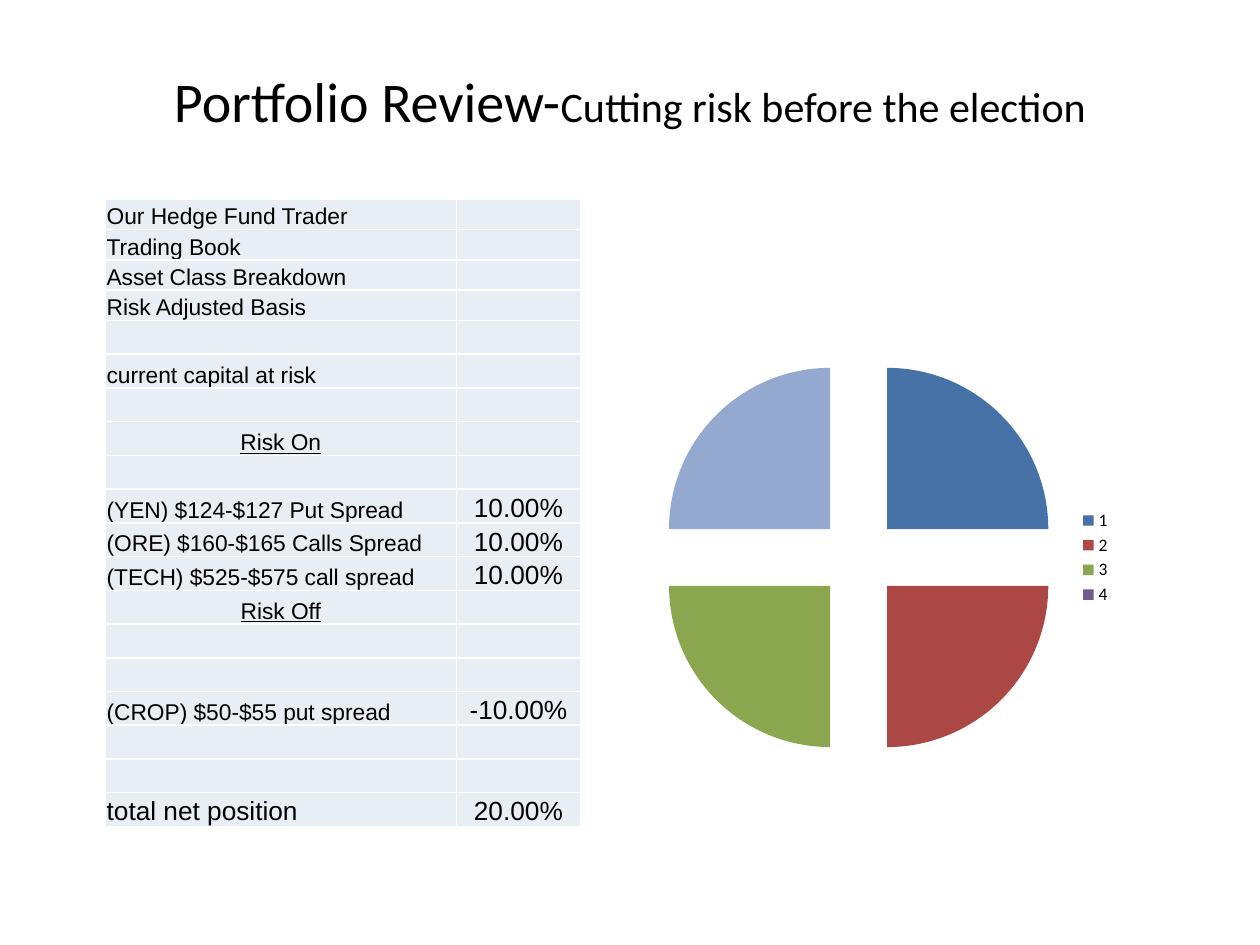
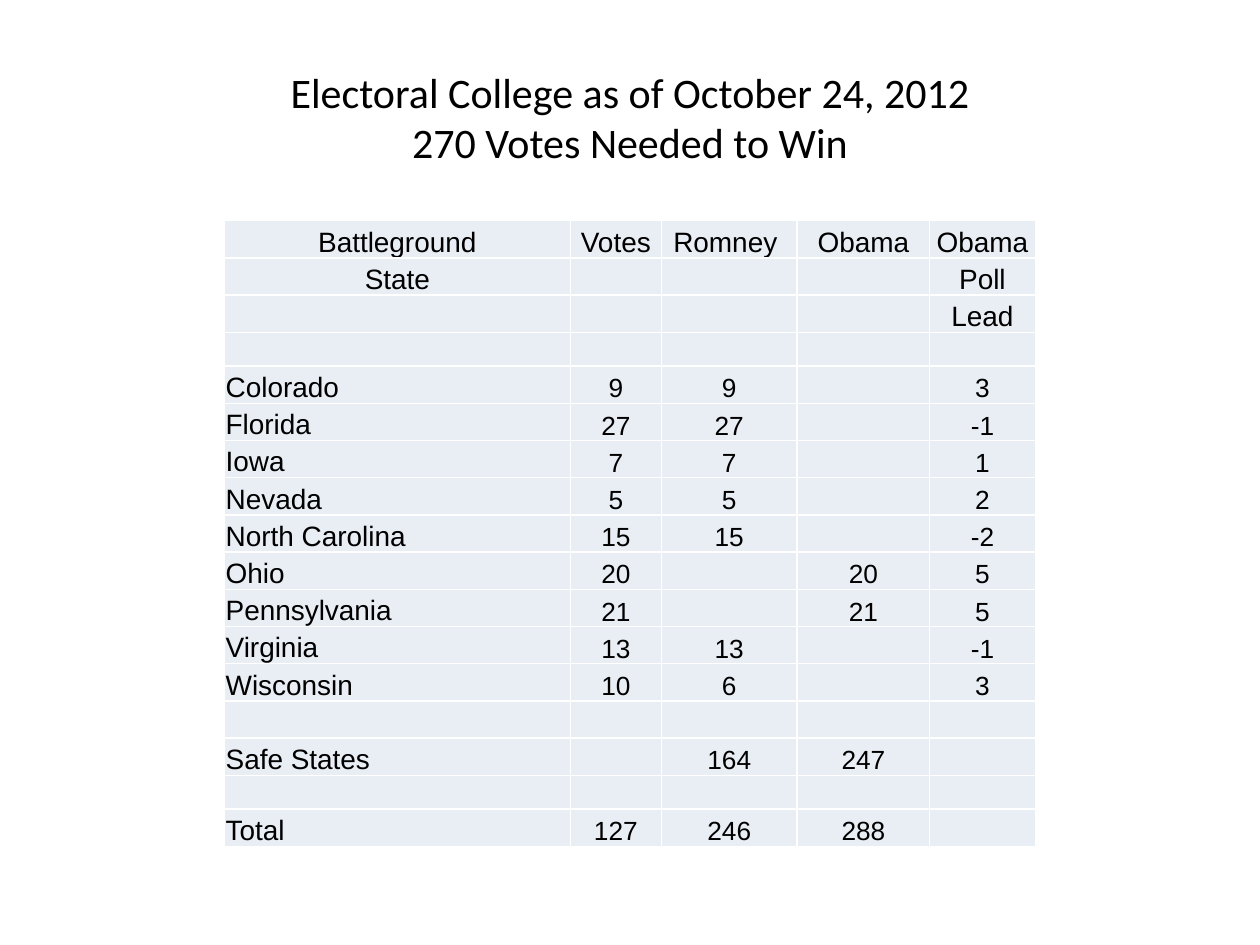
import pptx
import pptx.chart.data
import pptx.dml.color
import pptx.enum.chart
import pptx.enum.text
import pptx.oxml
import pptx.oxml.ns
import pptx.util
from lxml import etree

Cm, Pt = pptx.util.Cm, pptx.util.Pt
RGBColor = pptx.dml.color.RGBColor
PP_ALIGN, MSO_ANCHOR = pptx.enum.text.PP_ALIGN, pptx.enum.text.MSO_ANCHOR
qn = pptx.oxml.ns.qn

BLACK = RGBColor(0x00, 0x00, 0x00)
CELL_FILL = RGBColor(0xE9, 0xED, 0xF4)
CELL_BORDER = RGBColor(0xFF, 0xFF, 0xFF)
SLICE_COLOURS = [
    RGBColor(0x46, 0x72, 0xA8), RGBColor(0xAB, 0x47, 0x44),
    RGBColor(0x8A, 0xA6, 0x4F), RGBColor(0x72, 0x59, 0x90),
    RGBColor(0x41, 0x98, 0xAF), RGBColor(0xDB, 0x84, 0x3D),
    RGBColor(0x93, 0xA9, 0xCF), RGBColor(0xD1, 0x93, 0x92),
]
TITLE_FONT, TABLE_FONT = "Calibri", "Arial"
CELL_FORMAT = {
    "margin_left": Cm(0.03), "margin_right": Cm(0.03), "margin_top": Cm(0.03),
    "margin_bottom": 0, "vertical_anchor": MSO_ANCHOR.BOTTOM,
}


def add_titled_page(spans, top, height, bottom_margin):
    """Add a title-only page; spans are (text, size) pairs, "\\v" breaks a line."""
    page = deck.slides.add_slide(deck.slide_layouts[5])
    title = page.shapes.title
    title.left, title.top, title.width, title.height = Cm(1.27), top, Cm(22.86), height
    frame = title.text_frame
    frame.auto_size = pptx.enum.text.MSO_AUTO_SIZE.NONE
    frame.vertical_anchor = MSO_ANCHOR.MIDDLE
    frame.margin_bottom = bottom_margin
    para = frame.paragraphs[0]
    para.alignment = PP_ALIGN.CENTER
    for text, size in spans:
        for number, line in enumerate(text.split("\v")):
            if number:
                para.add_line_break()
                line_break = para._p.findall(qn("a:br"))[-1]
                etree.SubElement(line_break, qn("a:rPr"), sz=str(size * 100))
            span = para.add_run()
            span.text = line
            span.font.name, span.font.size = TITLE_FONT, Pt(size)
            span.font.color.rgb = BLACK
    return page


def add_plain_table(page, left, top, widths, heights, rows, style_of):
    """Add a table; style_of(row, column) gives size, centred and underlined."""
    frame = page.shapes.add_table(len(rows), len(widths), left, top,
                                  sum(widths), sum(heights))
    table = frame.table
    table.first_row = table.horz_banding = False
    for column, width in zip(table.columns, widths):
        column.width = width
    for row, height in zip(table.rows, heights):
        row.height = height
    for r, texts in enumerate(rows):
        for c in range(len(widths)):
            cell = table.cell(r, c)
            for name, value in CELL_FORMAT.items():
                setattr(cell, name, value)
            properties = cell._tc.get_or_add_tcPr()
            for side in ("lnL", "lnR", "lnT", "lnB"):
                line = etree.SubElement(properties, qn(f"a:{side}"), w=str(Pt(1)))
                solid = etree.SubElement(line, qn("a:solidFill"))
                etree.SubElement(solid, qn("a:srgbClr"), val=str(CELL_BORDER))
            cell.fill.solid()
            cell.fill.fore_color.rgb = CELL_FILL
            para = cell.text_frame.paragraphs[0]
            text = texts[c] if c < len(texts) else ""
            if not text:
                etree.SubElement(para._p, qn("a:endParaRPr"), sz="1200")
                continue
            size, centred, underlined = style_of(r, c)
            para.alignment = PP_ALIGN.CENTER if centred else PP_ALIGN.LEFT
            span = para.add_run()
            span.text = text
            span.font.color.rgb = BLACK
            font_format = {"name": TABLE_FONT, "size": Pt(size)}
            if underlined:
                font_format["underline"] = True
            for name, value in font_format.items():
                setattr(span.font, name, value)


deck = pptx.Presentation()
deck.slide_width, deck.slide_height = Cm(25.4), Cm(19.05)

# Portfolio review
portfolio_page = add_titled_page(
    [("Portfolio Review-", 32), ("Cutting risk before the election", 24)],
    Cm(0.64), Cm(4.24), Cm(1.63))

positions = [
    ["Our Hedge Fund Trader"],
    ["Trading Book"],
    ["Asset Class Breakdown"],
    ["Risk Adjusted Basis"],
    [],
    ["current capital at risk"],
    [],
    ["Risk On"],
    [],
    ["(YEN) $124-$127 Put Spread", "10.00%"],
    ["(ORE) $160-$165 Calls Spread", "10.00%"],
    ["(TECH) $525-$575 call spread", "10.00%"],
    ["Risk Off"],
    [],
    [],
    ["(CROP) $50-$55 put spread", "-10.00%"],
    [],
    [],
    ["total net position", "20.00%"],
]
total_row = len(positions) - 1
risk_rows = [r for r, texts in enumerate(positions) if texts in (["Risk On"], ["Risk Off"])]
add_plain_table(
    portfolio_page, Cm(2.12), Cm(4.02), [Cm(7.08), Cm(2.5)],
    [Cm(0.61)] * 4 + [Cm(0.68)] * (len(positions) - 4), positions,
    lambda r, c: (15 if c or r == total_row else 13, c > 0 or r in risk_rows,
                  r in risk_rows))

chart_data = pptx.chart.data.CategoryChartData()
chart_data.categories = [str(n) for n in range(1, 9)]
chart_data.add_series("Series 1", [25, 25, 25, None, None, None, -25, None])
chart = portfolio_page.shapes.add_chart(
    pptx.enum.chart.XL_CHART_TYPE.PIE, Cm(12.9), Cm(5.92), Cm(9.75), Cm(10.64),
    chart_data).chart
chart.has_title = False
chart.font.name, chart.font.size = TITLE_FONT, Pt(10)
chart.font.color.rgb = BLACK
chart.has_legend = True
chart.legend.position = pptx.enum.chart.XL_LEGEND_POSITION.RIGHT
chart.legend.include_in_layout = False
legend_position = chart.legend._element.find(qn("c:legendPos"))
for index in range(7, 3, -1):  # the legend lists only the first four categories
    entry = etree.Element(qn("c:legendEntry"))
    etree.SubElement(entry, qn("c:idx"), val=str(index))
    etree.SubElement(entry, qn("c:delete"), val="1")
    legend_position.addnext(entry)

pie = chart.plots[0]
pie.vary_by_categories = True
series = pie.series[0]
explosion = etree.Element(qn("c:explosion"), val="25")
series._element.find(qn("c:tx")).addnext(explosion)
for index, colour in enumerate(SLICE_COLOURS):
    slice_format = series.points[index].format
    slice_format.fill.solid()
    slice_format.fill.fore_color.rgb = colour
    slice_format.line.fill.background()

# Electoral college
election_page = add_titled_page(
    [("Electoral College as of October 24, 2012\v270 Votes Needed to Win", 24)],
    Cm(0.76), Cm(3.18), Cm(0.13))

votes = [
    ["Battleground", "Votes", "Romney ", "Obama", "Obama"],
    ["State", "", "", "", "Poll"],
    ["", "", "", "", "Lead"],
    [],
    ["Colorado", "9", "9", "", "3"],
    ["Florida", "27", "27", "", "-1"],
    ["Iowa", "7", "7", "", "1"],
    ["Nevada", "5", "5", "", "2"],
    ["North Carolina", "15", "15", "", "-2"],
    ["Ohio", "20", "", "20", "5"],
    ["Pennsylvania", "21", "", "21", "5"],
    ["Virginia", "13", "13", "", "-1"],
    ["Wisconsin", "10", "6", "", "3"],
    [],
    ["Safe States", "", "164", "247"],
    [],
    ["Total", "127", "246", "288"],
]
header_rows, low_rows = 3, (3, 15)
add_plain_table(
    election_page, Cm(4.52), Cm(4.45),
    [Cm(6.98), Cm(1.83), Cm(2.74), Cm(2.67), Cm(2.13)],
    [Cm(0.68) if r in low_rows else Cm(0.75) for r in range(len(votes))], votes,
    lambda r, c: (16 if r < header_rows or c == 0 else 15,
                  r < header_rows or c > 0, False))

deck.save("out.pptx")
